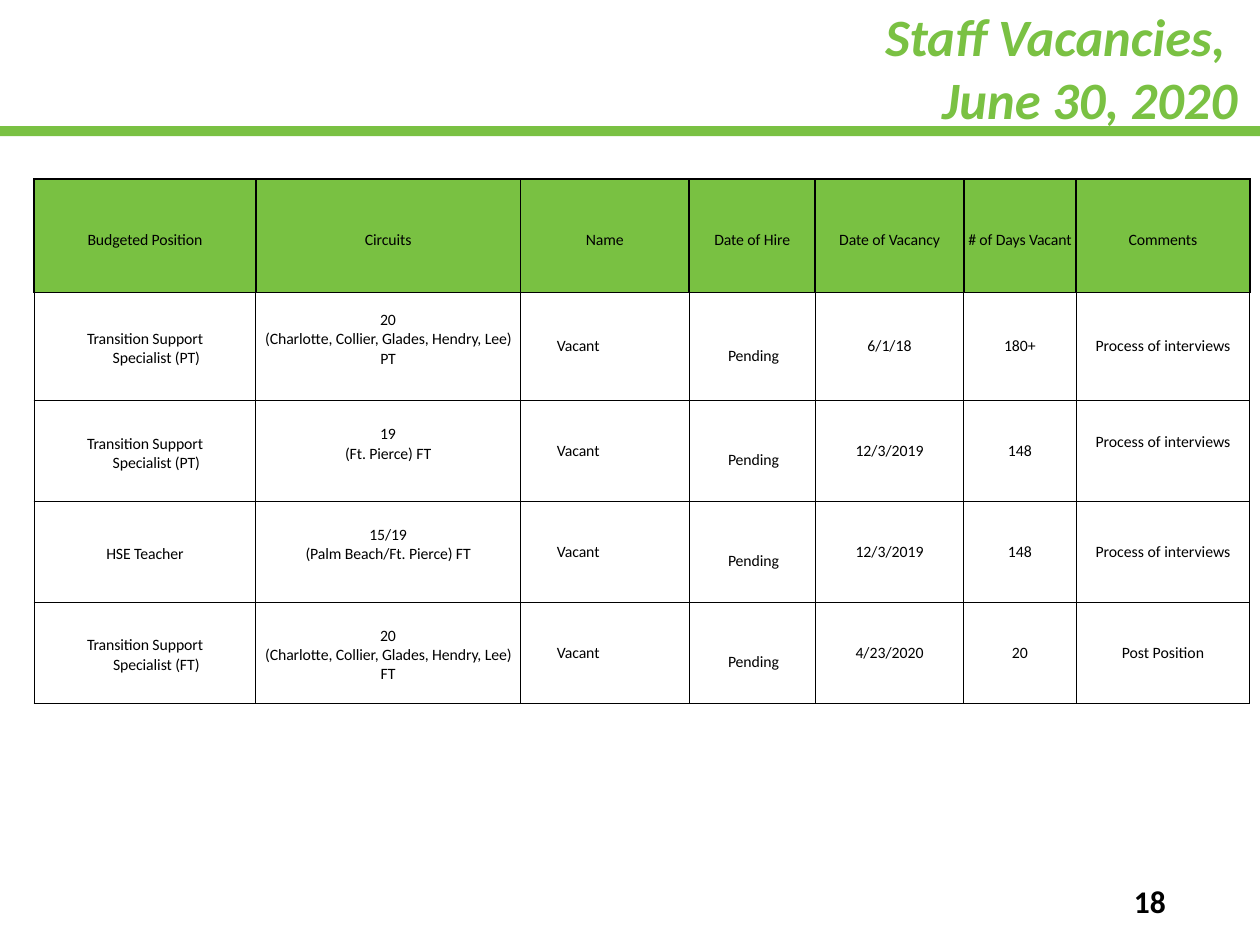
from itertools import accumulate
from lxml.etree import SubElement
from pptx import Presentation
from pptx.dml.color import RGBColor as Color
from pptx.enum.shapes import MSO_SHAPE as Shape
from pptx.enum.text import MSO_ANCHOR as Anchor, PP_ALIGN as Align
from pptx.oxml.ns import qn
from pptx.util import Inches, Pt

COLORS = {"accent": "7AC143", "header": "79C142", "ink": "000000"}
FONT = "Calibri"
COLUMNS = [1.76, 2.1, 1.34, 1, 1.18, 0.89, 1.38]
ROWS = [0.9, 0.86, 0.8, 0.8, 0.8]
TABLE_LEFT, TABLE_TOP = 0.27, 1.42
BLOCKS = [(0, 2), (2, 3), (3, 5)]
LINE = 0.15

HEADERS = ["Budgeted Position", "Circuits", "Name", "Date of Hire",
           "Date of Vacancy", "# of Days Vacant", "Comments"]
VACANCIES = [
    ["Transition Support Specialist (PT)",
     "20\n(Charlotte, Collier, Glades, Hendry, Lee) PT",
     "Vacant", "Pending", "6/1/18", "180+", "Process of interviews"],
    ["Transition Support Specialist (PT)", "19\n(Ft. Pierce) FT",
     "Vacant", "Pending", "12/3/2019", "148", "Process of interviews"],
    ["HSE Teacher", "15/19\n(Palm Beach/Ft. Pierce) FT",
     "Vacant", "Pending", "12/3/2019", "148", "Process of interviews"],
    ["Transition Support Specialist (FT)",
     "20\n(Charlotte, Collier, Glades, Hendry, Lee) FT",
     "Vacant", "Pending", "4/23/2020", "20", "Post Position"],
]
RECORDS = [HEADERS] + VACANCIES
RAISED = {(1, 1), (2, 1), (3, 1), (2, 6)}
INDENTS = {0: (0.41, -0.18), 2: (0.29, 0), 3: (0.02, 0)}
LEFT_MARGINS = [0, 0.05, 0, 0, 0, 0, 0]
RIGHT_MARGINS = [0.23, 0.05, 0, 0, 0, 0, 0]
TOP_MARGINS = [0.04, 0.04, 0, LINE, 0, 0, 0]
BOTTOM_LINES = [1, 1, 0.5, 1, 0.5]


def style(para, size, color, **values):
    values = {"name": FONT, "size": Pt(size), **values}
    for span in para.runs:
        for name, value in values.items():
            setattr(span.font, name, value)
        span.font.color.rgb = Color.from_string(COLORS[color])


def draw_borders(cell, widths):
    properties = cell._tc.get_or_add_tcPr()
    for side, width in widths.items():
        line = SubElement(properties, qn(f"a:ln{side}"), w=str(Pt(width)))
        fill = SubElement(line, qn("a:solidFill"))
        SubElement(fill, qn("a:srgbClr"), val=COLORS["ink"])


deck = Presentation()
deck.slide_width, deck.slide_height = Inches(10), Inches(7.5)
page = deck.slides.add_slide(deck.slide_layouts[6])

rule = page.shapes.add_shape(Shape.RECTANGLE, 0, Inches(1), deck.slide_width, Inches(0.08))
rule.shadow.inherit = False
rule.fill.solid()
rule.fill.fore_color.rgb = Color.from_string(COLORS["accent"])
rule.line.fill.background()

title = page.shapes.add_textbox(Inches(2.89), 0, Inches(7.03), Inches(1.08)).text_frame
title.word_wrap = True
title.vertical_anchor = Anchor.BOTTOM
para = title.paragraphs[0]
para.text = "Staff Vacancies, \vJune 30, 2020"
para.alignment = Align.RIGHT
style(para, 30, "accent", bold=True, italic=True)

number = page.shapes.add_textbox(Inches(9), Inches(6.95), Inches(1), Inches(0.4)).text_frame
number.word_wrap = True
number.margin_left = number.margin_right = 0
number.text = "18"
style(number.paragraphs[0], 18, "ink", bold=True)

row_tops = list(accumulate(ROWS, initial=TABLE_TOP))
for first, last in BLOCKS:
    table = page.shapes.add_table(
        last - first, len(COLUMNS), Inches(TABLE_LEFT), Inches(row_tops[first]),
        Inches(sum(COLUMNS)), Inches(sum(ROWS[first:last]))).table
    table.first_row = table.horz_banding = False
    for column, width in zip(table.columns, COLUMNS):
        column.width = Inches(width)
    for row in range(first, last):
        table.rows[row - first].height = Inches(ROWS[row])
        is_header = row == 0
        side_line = 1 if is_header else 0.5
        for column, text in enumerate(RECORDS[row]):
            cell = table.cell(row - first, column)
            cell.text = text
            layout = {
                "vertical_anchor": Anchor.MIDDLE,
                "margin_left": Inches(0 if is_header else LEFT_MARGINS[column]),
                "margin_right": Inches(0 if is_header else RIGHT_MARGINS[column]),
                "margin_top": Inches(0.07 if is_header else TOP_MARGINS[column]),
                "margin_bottom": Inches(LINE if (row, column) in RAISED else 0),
            }
            for name, value in layout.items():
                setattr(cell, name, value)
            draw_borders(cell, {"L": side_line, "R": side_line, "T": 1, "B": BOTTOM_LINES[row]})
            if is_header:
                cell.fill.solid()
                cell.fill.fore_color.rgb = Color.from_string(COLORS["header"])
            else:
                cell.fill.background()
            for para in cell.text_frame.paragraphs:
                is_name = column == 2 and not is_header
                para.alignment = Align.LEFT if is_name else Align.CENTER
                if not is_header and column in INDENTS:
                    margin, indent = INDENTS[column]
                    properties = para._p.get_or_add_pPr()
                    properties.set("marL", str(Inches(margin)))
                    properties.set("indent", str(Inches(indent)))
                style(para, 9, "ink")
                if is_header or column < 4:
                    for span in para.runs:
                        span._r.get_or_add_rPr().set("spc", "-5")

deck.save("out.pptx")
